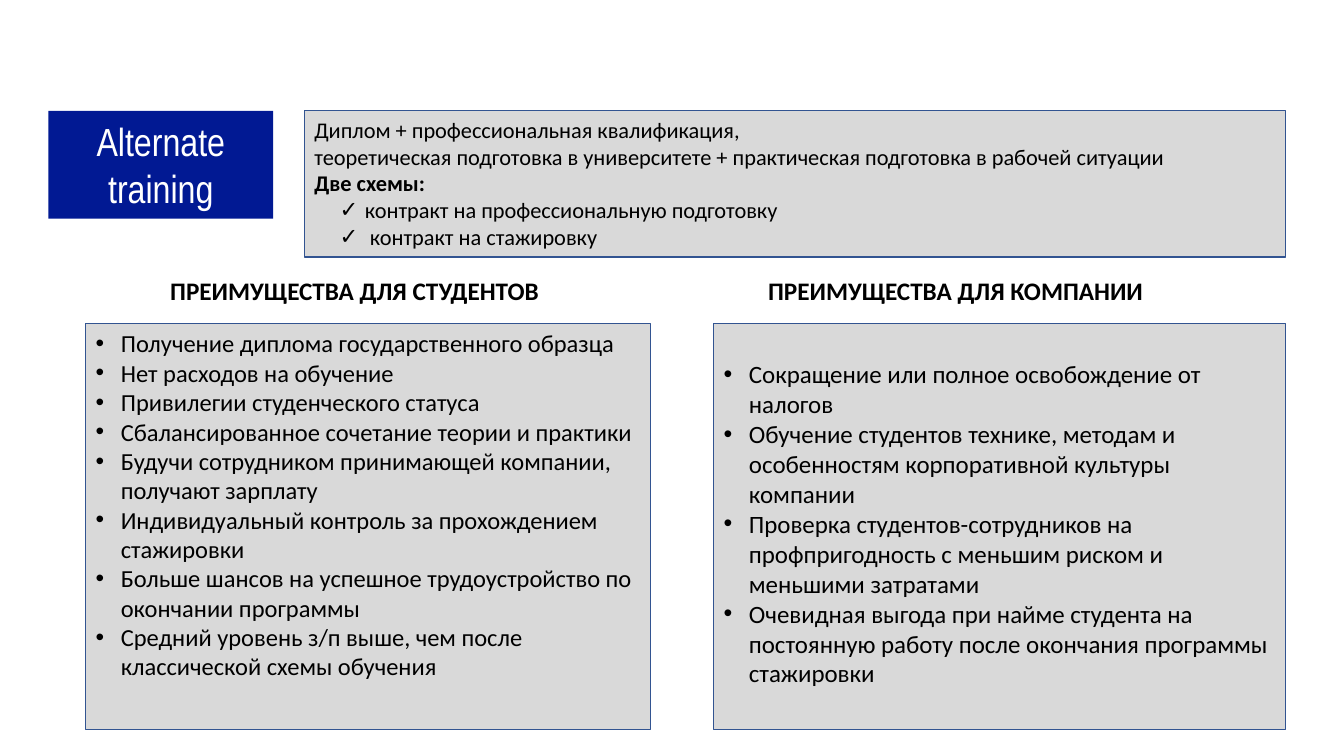
from lxml import etree
from pptx import Presentation
from pptx import util as u
from pptx.dml.color import RGBColor
from pptx.enum import shapes, text
from pptx.oxml.ns import qn

WIDTH, HEIGHT = 13.33, 7.5
COLORS = {"navy": "011993", "panel": "D9D9D9", "border": "325491",
          "black": "000000", "white": "FFFFFF"}
BODY = {"name": "Calibri", "size": 16, "color": "black", "bold": False}
HANGING = 0.25

SCHEMES = [
    ("Диплом + профессиональная квалификация,", {}),
    ("теоретическая подготовка в университете + практическая подготовка в рабочей ситуации", {}),
    ("Две схемы:", {"bold": True}),
    ("контракт на профессиональную подготовку", {"bullet": "✓", "margin": 0.5}),
    (" контракт на стажировку", {"bullet": "✓", "margin": 0.5}),
]
STUDENT_BENEFITS = [
    "Получение диплома государственного образца",
    "Нет расходов на обучение",
    "Привилегии студенческого статуса",
    "Сбалансированное сочетание теории и практики",
    "Будучи сотрудником принимающей компании, получают зарплату",
    "Индивидуальный контроль за прохождением стажировки",
    "Больше шансов на успешное трудоустройство по окончании программы",
    "Средний уровень з/п выше, чем после классической схемы обучения",
]
COMPANY_BENEFITS = [
    "Сокращение или полное освобождение от налогов",
    "Обучение студентов технике, методам и особенностям корпоративной культуры компании",
    "Проверка студентов-сотрудников на профпригодность с меньшим риском и меньшими затратами",
    "Очевидная выгода при найме студента на постоянную работу после окончания программы стажировки",
]


def inches(box):
    return [u.Inches(length) for length in box]


def rgb(name):
    return RGBColor.from_string(COLORS[name])


def format_font(font, values):
    for key, value in values.items():
        if key == "color":
            font.color.rgb = rgb(value)
        else:
            setattr(font, key, u.Pt(value) if key == "size" else value)


def add_bullet(paragraph, character, margin):
    properties = paragraph._p.get_or_add_pPr()
    properties.set("marL", str(u.Inches(margin)))
    properties.set("indent", str(-u.Inches(HANGING)))
    etree.SubElement(properties, qn("a:buFont")).set("typeface", "Arial")
    etree.SubElement(properties, qn("a:buChar")).set("char", character)


def write(frame, lines, base, align=text.PP_ALIGN.LEFT):
    for index, (words, changes) in enumerate(lines):
        paragraph = frame.add_paragraph() if index else frame.paragraphs[0]
        paragraph.alignment = align
        values = {**base, **changes}
        bullet, margin = values.pop("bullet", None), values.pop("margin", HANGING)
        if bullet:
            add_bullet(paragraph, bullet, margin)
        run = paragraph.add_run()
        run.text = words
        format_font(run.font, values)


def add_panel(slide, box, fill, border=None):
    shape = slide.shapes.add_shape(shapes.MSO_SHAPE.RECTANGLE, *inches(box))
    shape.shadow.inherit = False
    shape.fill.solid()
    shape.fill.fore_color.rgb = rgb(fill)
    if border:
        shape.line.color.rgb = rgb(border)
        shape.line.width = u.Pt(0.75)
    else:
        shape.line.fill.background()
    frame = shape.text_frame
    frame.word_wrap = True
    frame.vertical_anchor = text.MSO_ANCHOR.TOP
    return frame


def add_header(slide, left, top, width, height):
    # Title plate
    plate = add_panel(slide, (left, top, 2.23, 1.07), "navy")
    plate.vertical_anchor = text.MSO_ANCHOR.MIDDLE
    for side in ("left", "top", "right", "bottom"):
        setattr(plate, f"margin_{side}", u.Inches(0.08))
    write(plate, [("Alternate training", {})],
          {"name": "Arial Narrow", "size": 28, "color": "white"}, text.PP_ALIGN.CENTER)
    # Description of the schemes
    offset = 2.54
    panel = add_panel(slide, (left + offset, top, width - offset, height), "panel", "border")
    write(panel, SCHEMES, BODY)


def add_benefits(slide, box, heading, heading_left, heading_width, items, size, top_inset):
    left, top, width, height = box
    # Heading above the list
    title = slide.shapes.add_textbox(*inches((left + heading_left, top, heading_width, 0.4)))
    title.text_frame.word_wrap = False
    write(title.text_frame, [(heading, {})], {**BODY, "size": 18, "bold": True})
    # Bulleted list
    gap = 0.53
    panel = add_panel(slide, (left, top + gap, width, height - gap), "panel", "border")
    panel.margin_top = u.Inches(top_inset)
    write(panel, [(item, {"bullet": "•"}) for item in items], {**BODY, "size": size})


def main():
    presentation = Presentation()
    presentation.slide_width, presentation.slide_height = inches((WIDTH, HEIGHT))
    slide = presentation.slides.add_slide(presentation.slide_layouts[6])
    add_header(slide, 0.48, 1.1, 12.27, 1.45)
    add_benefits(slide, (0.85, 2.68, 5.6, 4.56), "ПРЕИМУЩЕСТВА ДЛЯ СТУДЕНТОВ",
                 0.74, 3.9, STUDENT_BENEFITS, 17.5, 0.05)
    add_benefits(slide, (7.08, 2.68, 5.67, 4.56), "ПРЕИМУЩЕСТВА ДЛЯ КОМПАНИИ",
                 0.44, 3.96, COMPANY_BENEFITS, 17.8, 0.35)
    presentation.save("out.pptx")


if __name__ == "__main__":
    main()
